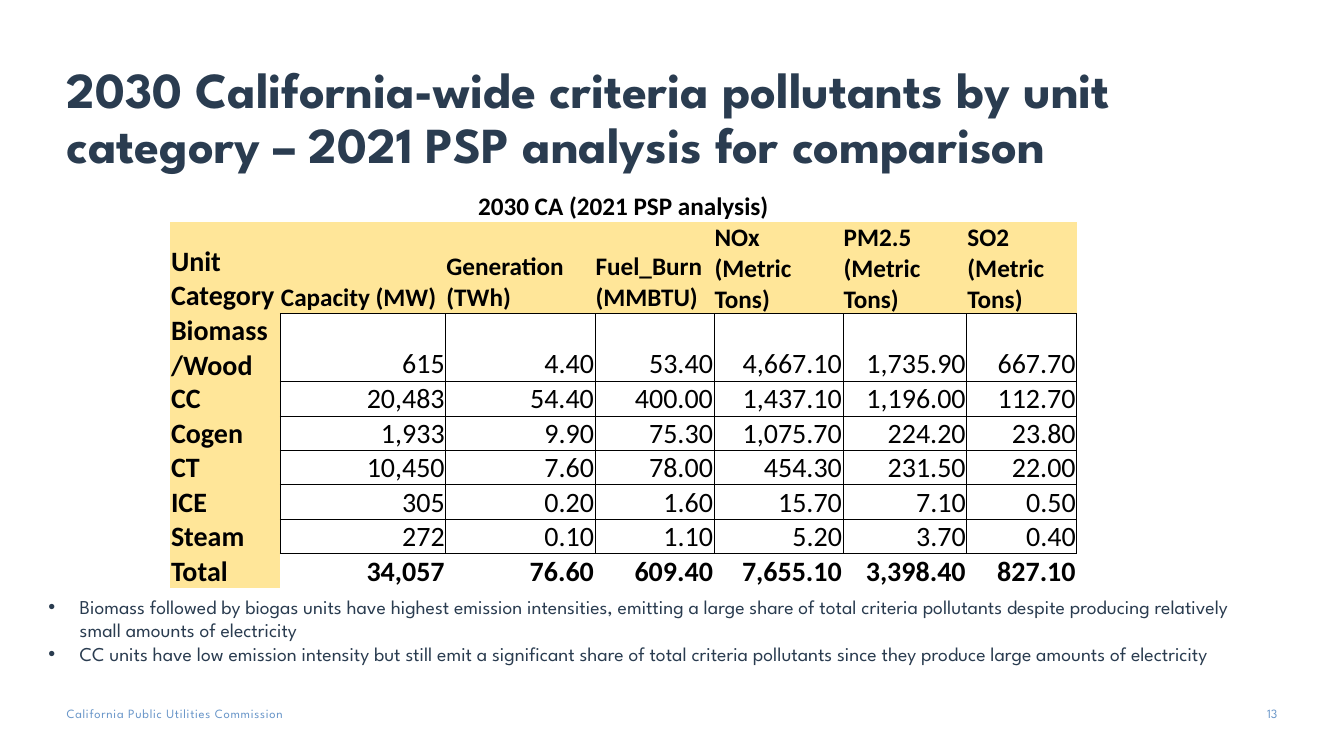
from lxml.etree import SubElement
from pptx import Presentation
from pptx.dml.color import RGBColor
from pptx.enum.text import MSO_ANCHOR, PP_ALIGN
from pptx.oxml.ns import qn
from pptx.util import Cm, Pt

COLORS = {"navy": "2A3C50", "blue": "6996C9", "black": "000000", "sand": "FFE699"}
HEADING_FONT, TABLE_FONT = "League Spartan", "Calibri"
PLAIN_GRID = "{2D5ABB26-0587-4C30-8999-92F81FD0307C}"

TITLE = ("2030 California-wide criteria pollutants by unit category "
         "– 2021 PSP analysis for comparison")
FINDINGS = [
    "Biomass followed by biogas units have highest emission intensities, emitting a large share "
    "of total criteria pollutants despite producing relatively small amounts of electricity",
    "CC units have low emission intensity but still emit a significant share of total criteria "
    "pollutants since they produce large amounts of electricity",
]
CAPTION = "2030 CA (2021 PSP analysis)"
EMISSIONS = [
    ["Unit Category", "Capacity (MW)", "Generation (TWh)", "Fuel_Burn (MMBTU)",
     "NOx (Metric Tons)", "PM2.5 (Metric Tons)", "SO2 (Metric Tons)"],
    ["Biomass/Wood", "615", "4.40", "53.40", "4,667.10", "1,735.90", "667.70"],
    ["CC", "20,483", "54.40", "400.00", "1,437.10", "1,196.00", "112.70"],
    ["Cogen", "1,933", "9.90", "75.30", "1,075.70", "224.20", "23.80"],
    ["CT", "10,450", "7.60", "78.00", "454.30", "231.50", "22.00"],
    ["ICE", "305", "0.20", "1.60", "15.70", "7.10", "0.50"],
    ["Steam", "272", "0.10", "1.10", "5.20", "3.70", "0.40"],
    ["Total", "34,057", "76.60", "609.40", "7,655.10", "3,398.40", "827.10"],
]
COLUMN_WIDTHS = [2.77, 4.17, 3.76, 3, 3.25, 3.12, 2.77]
CAPTION_HEIGHT, HEADER_HEIGHT, UNIT_HEIGHT = 1.07, 1.88, 0.86


def write(paragraph, text, *, size, color, font=HEADING_FONT, bold=False,
          align=PP_ALIGN.LEFT, line_spacing=1, tracking=0):
    """Add formatted text to a paragraph."""
    paragraph.alignment = align
    paragraph.line_spacing = line_spacing
    run = paragraph.add_run()
    run.text = text
    run.font.name = font
    run.font.size = Pt(size)
    run.font.bold = bold
    run.font.color.rgb = RGBColor.from_string(COLORS[color])
    if tracking:
        run.font._element.set("spc", str(tracking))


def add_frame(slide, left, top, width, height, margins, anchor=MSO_ANCHOR.TOP):
    """Add a wrapping text box and return its text frame."""
    frame = slide.shapes.add_textbox(Cm(left), Cm(top), Cm(width), Cm(height)).text_frame
    frame.word_wrap = True
    frame.vertical_anchor = anchor
    (frame.margin_left, frame.margin_top,
     frame.margin_right, frame.margin_bottom) = map(Cm, margins)
    return frame


def add_findings(slide):
    """Add the bulleted findings below the table."""
    frame = add_frame(slide, 0.97, 14.86, 30.51, 2.64, (0.25, 0.13, 0.25, 0.13))
    for index, finding in enumerate(FINDINGS):
        paragraph = frame.add_paragraph() if index else frame.paragraphs[0]
        properties = paragraph._p.get_or_add_pPr()
        properties.set("marL", str(Cm(0.79)))
        properties.set("indent", str(-Cm(0.79)))
        SubElement(properties, qn("a:buFont"), typeface="Arial")
        SubElement(properties, qn("a:buChar"), char="•")
        write(paragraph, finding, size=14, color="navy")


def draw_borders(cell, sides):
    """Draw thin black lines on the given sides of a cell."""
    properties = cell._tc.get_or_add_tcPr()
    for side in sides:
        line = SubElement(properties, qn(f"a:ln{side}"), w=str(Pt(0.5)))
        SubElement(SubElement(line, qn("a:solidFill")), qn("a:srgbClr"), val=COLORS["black"])


def fill_cell(cell, text, *, sides="", shaded=False, **text_format):
    """Set the text, borders and background of a table cell."""
    cell.vertical_anchor = MSO_ANCHOR.BOTTOM
    cell.margin_left = cell.margin_right = cell.margin_top = Cm(0.02)
    cell.margin_bottom = 0
    write(cell.text_frame.paragraphs[0], text, font=TABLE_FONT, color="black", **text_format)
    draw_borders(cell, sides)
    if shaded:
        cell.fill.solid()
        cell.fill.fore_color.rgb = RGBColor.from_string(COLORS["sand"])
    else:
        cell.fill.background()


def border_sides(row, column, total_row):
    """Return the sides of a cell that touch the grid of unit values."""
    if column == 0:
        return "R" if 0 < row < total_row else ""
    if row == 0:
        return "B"
    return "T" if row == total_row else "LRTB"


def add_emissions_table(slide):
    """Add the table of emissions by unit category."""
    heights = [CAPTION_HEIGHT, HEADER_HEIGHT] + [UNIT_HEIGHT] * (len(EMISSIONS) - 1)
    table = slide.shapes.add_table(len(heights), len(COLUMN_WIDTHS), Cm(4.29), Cm(4.52),
                                   Cm(sum(COLUMN_WIDTHS)), Cm(sum(heights))).table
    table.first_row = table.horz_banding = False
    table._tbl.tblPr.find(qn("a:tableStyleId")).text = PLAIN_GRID
    for column, width in zip(table.columns, COLUMN_WIDTHS):
        column.width = Cm(width)
    for row, height in zip(table.rows, heights):
        row.height = Cm(height)

    caption = table.cell(0, 0)
    caption.merge(table.cell(0, len(COLUMN_WIDTHS) - 1))
    fill_cell(caption, CAPTION, size=18, bold=True, align=PP_ALIGN.CENTER)
    total_row = len(EMISSIONS) - 1
    for row, entries in enumerate(EMISSIONS):
        for column, entry in enumerate(entries):
            is_label = row == 0 or column == 0
            fill_cell(table.cell(row + 1, column), entry,
                      sides=border_sides(row, column, total_row),
                      shaded=is_label,
                      size=18 if row == 0 and column else 20,
                      bold=is_label or row == total_row,
                      align=PP_ALIGN.LEFT if is_label else PP_ALIGN.RIGHT)


def main():
    """Build and save the slide."""
    deck = Presentation()
    deck.slide_width, deck.slide_height = Cm(33.87), Cm(19.05)
    slide = deck.slides.add_slide(deck.slide_layouts[6])
    footer = add_frame(slide, 1.68, 17.78, 8.15, 0.38, (0, 0, 0, 0))
    write(footer.paragraphs[0], "California Public Utilities Commission",
          size=9, color="blue", tracking=50)
    title = add_frame(slide, 1.68, 1.14, 30.51, 3.38, (0, 0.13, 0.25, 0.13), MSO_ANCHOR.BOTTOM)
    write(title.paragraphs[0], TITLE, size=36, color="navy", bold=True, line_spacing=0.9)
    page_number = add_frame(slide, 31.12, 17.78, 1.07, 0.51, (0, 0, 0, 0))
    write(page_number.paragraphs[0], "13", size=9, color="blue", align=PP_ALIGN.RIGHT)
    add_findings(slide)
    add_emissions_table(slide)
    deck.save("out.pptx")


if __name__ == "__main__":
    main()
